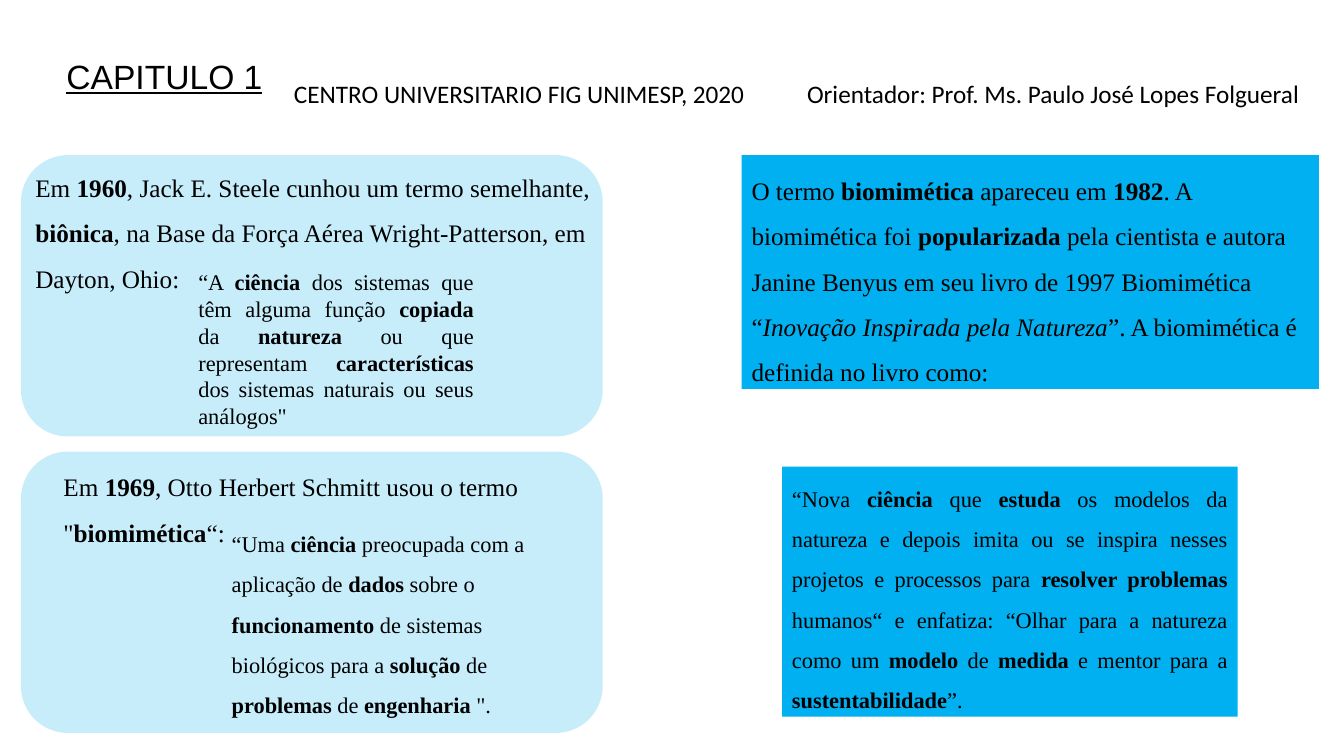
from lxml import etree
from pptx import Presentation
from pptx.dml.color import RGBColor
from pptx.enum.shapes import MSO_SHAPE as Shape
from pptx.enum.text import MSO_ANCHOR as Anchor, MSO_AUTO_SIZE as AutoSize, PP_ALIGN as Align
from pptx.oxml.ns import qn
from pptx.util import Cm, Pt

BLACK = "000000"
BLUE = "00B0F0"
SERIF = "Times New Roman"
BOOK_TITLE = "Inovação Inspirada pela Natureza"


def paint(color_format, hex_color):
    color_format.rgb = RGBColor.from_string(hex_color)


def write(frame, marked_text, size, font_name, align=Align.LEFT, spacing=1.0):
    """Fill the frame with one paragraph; words between asterisks are bold."""
    frame.word_wrap = True
    frame.vertical_anchor = Anchor.TOP
    frame.auto_size = AutoSize.SHAPE_TO_FIT_TEXT
    paragraph = frame.paragraphs[0]
    paragraph.alignment = align
    paragraph.line_spacing = spacing
    for index, words in enumerate(marked_text.split("*")):
        run = paragraph.add_run()
        run.text = words
        run.font.name = font_name
        run.font.size = Pt(size)
        run.font.bold = index % 2 == 1 and words != BOOK_TITLE
        run.font.italic = words == BOOK_TITLE
        paint(run.font.color, BLACK)
    return paragraph


prs = Presentation()
prs.slide_width, prs.slide_height = Cm(33.87), Cm(19.05)
slide = prs.slides.add_slide(prs.slide_layouts[5])

# Pale rounded panels behind the history notes
for panel_top in (3.91, 11.38):
    panel = slide.shapes.add_shape(
        Shape.ROUNDED_RECTANGLE, Cm(0.53), Cm(panel_top), Cm(14.66), Cm(7.09))
    panel.shadow.inherit = False
    panel.line.fill.background()
    panel.fill.solid()
    paint(panel.fill.fore_color, BLUE)
    tint = panel.fill._xPr.find(qn("a:solidFill"))[0]
    etree.SubElement(tint, qn("a:alpha")).set("val", "22000")

# Chapter title
chapter = slide.shapes.title
chapter.left, chapter.top, chapter.width, chapter.height = Cm(1.42), Cm(0.13), Cm(21.26), Cm(3.68)
chapter.text_frame.text = "CAPITULO 1"
chapter.text_frame.vertical_anchor = Anchor.MIDDLE
chapter.text_frame.auto_size = AutoSize.NONE
heading = chapter.text_frame.paragraphs[0]
heading.alignment = Align.LEFT
heading.line_spacing = 0.9
heading_font = heading.runs[0].font
heading_font.name, heading_font.size, heading_font.underline = "Arial", Pt(24), True
paint(heading_font.color, BLACK)

# History notes and their quotations: left, top, width, height, size, align, spacing, text
notes = [
    (0.64, 3.84, 14.55, 3.58, 18, Align.LEFT, 1.5,
     "Em *1960*, Jack E. Steele cunhou um termo semelhante, *biônica*, "
     "na Base da Força Aérea Wright-Patterson, em Dayton, Ohio:"),
    (4.75, 6.63, 7.44, 4.37, 16, Align.JUSTIFY, 1.0,
     "“A *ciência* dos sistemas que têm alguma função *copiada* da *natureza* "
     "ou que representam *características* dos sistemas naturais ou seus análogos\""),
    (1.35, 11.38, 13.0, 2.44, 18, Align.LEFT, 1.5,
     "Em *1969*, Otto Herbert Schmitt usou o termo \"*biomimética*“:"),
    (5.59, 12.9, 7.92, 5.26, 16, Align.LEFT, 1.5,
     "“Uma *ciência* preocupada com a aplicação de *dados* sobre o *funcionamento* "
     "de sistemas biológicos para a *solução* de *problemas* de *engenharia* \"."),
]
for left, top, width, height, size, align, spacing, text in notes:
    note = slide.shapes.add_textbox(Cm(left), Cm(top), Cm(width), Cm(height))
    write(note.text_frame, text, size, SERIF, align, spacing)

# Solid blue definitions of biomimetics
definitions = [
    (18.69, 3.91, 14.55, 5.89, 18, Align.LEFT,
     "O termo *biomimética* apareceu em *1982*. A biomimética foi *popularizada* "
     "pela cientista e autora Janine Benyus em seu livro de 1997 Biomimética "
     f"“*{BOOK_TITLE}*”. A biomimética é definida no livro como:"),
    (19.71, 11.76, 11.48, 6.3, 16, Align.JUSTIFY,
     "“Nova *ciência* que *estuda* os modelos da natureza e depois imita ou se inspira "
     "nesses projetos e processos para *resolver problemas* humanos“ e enfatiza: "
     "“Olhar para a natureza como um *modelo* de *medida* e mentor para a *sustentabilidade*”."),
]
for left, top, width, height, size, align, text in definitions:
    definition = slide.shapes.add_shape(
        Shape.RECTANGLE, Cm(left), Cm(top), Cm(width), Cm(height))
    definition.shadow.inherit = False
    definition.line.fill.background()
    definition.fill.solid()
    paint(definition.fill.fore_color, BLUE)
    write(definition.text_frame, text, size, SERIF, align, 1.5)

# Institution and advisor, set apart by a tab stop
credits = slide.shapes.add_textbox(Cm(7.16), Cm(1.85), Cm(26.29), Cm(1.02))
credit_line = write(
    credits.text_frame,
    "CENTRO UNIVERSITARIO FIG UNIMESP, 2020\tOrientador: Prof. Ms. Paulo José Lopes Folgueral",
    18, "Calibri")
tab_stops = etree.SubElement(credit_line._p.get_or_add_pPr(), qn("a:tabLst"))
etree.SubElement(tab_stops, qn("a:tab"), pos=str(Cm(12.93)), algn="l")

prs.save("out.pptx")
